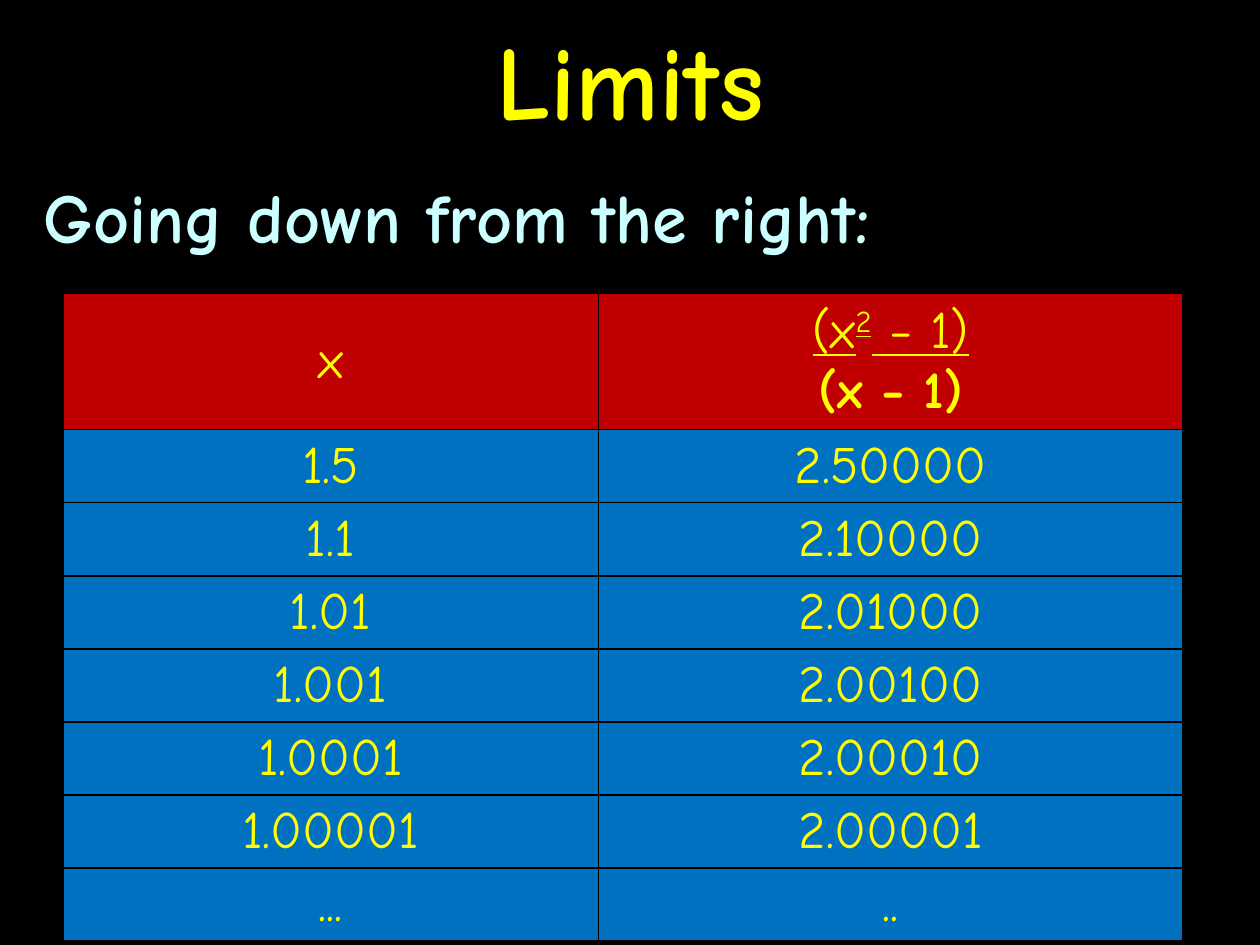
"""Build a slide that tabulates a limit approached from the right."""
from lxml import etree
from pptx import Presentation
from pptx.dml.color import RGBColor
from pptx.enum import text
from pptx.oxml.ns import qn
from pptx.util import Inches, Pt

FONT = "Comic Neue"
BLACK = RGBColor(0x00, 0x00, 0x00)
YELLOW = RGBColor(0xFF, 0xFF, 0x00)
PALE_CYAN = RGBColor(0xCC, 0xFF, 0xFF)
RED = RGBColor(0xC0, 0x00, 0x00)
BLUE = RGBColor(0x00, 0x70, 0xC0)

VALUES = [
    ("1.5", "2.50000"),
    ("1.1", "2.10000"),
    ("1.01", "2.01000"),
    ("1.001", "2.00100"),
    ("1.0001", "2.00010"),
    ("1.00001", "2.00001"),
    ("...", ".."),
]


def style_run(r, size, color, bold=False):
    """Set the font of one run."""
    r.font.name = FONT
    r.font.size = Pt(size)
    r.font.bold = bold
    r.font.color.rgb = color


def add_text(s, box, wording, size, color):
    """Add a bold one-paragraph text box and return it."""
    sp = s.shapes.add_textbox(*(Inches(v) for v in box))
    tf = sp.text_frame
    tf.word_wrap = True
    tf.text = wording
    style_run(tf.paragraphs[0].runs[0], size, color, bold=True)
    return sp


def add_borders(cell):
    """Draw a thin black line on each side of a cell."""
    tc_pr = cell._tc.get_or_add_tcPr()
    for side in ("lnL", "lnR", "lnT", "lnB"):
        ln = etree.SubElement(tc_pr, qn(f"a:{side}"), w=str(Pt(1)))
        fill = etree.SubElement(ln, qn("a:solidFill"))
        etree.SubElement(fill, qn("a:srgbClr"), val=str(BLACK))


def style_cell(cell, color):
    """Set the borders, fill, margins and anchor of a cell."""
    add_borders(cell)
    cell.fill.solid()
    cell.fill.fore_color.rgb = color
    cell.vertical_anchor = text.MSO_ANCHOR.MIDDLE
    cell.margin_left = cell.margin_right = Inches(0.04)
    cell.margin_top = cell.margin_bottom = Inches(0.04)
    for p in cell.text_frame.paragraphs:
        p.alignment = text.PP_ALIGN.CENTER
        for r in p.runs:
            style_run(r, 30, YELLOW)


def fill_fraction(cell):
    """Write the quotient as an underlined numerator over a denominator."""
    tf = cell.text_frame
    numerator = tf.paragraphs[0]
    for part in ("(x", "2", " − 1)"):
        numerator.add_run().text = part
    denominator = tf.add_paragraph()
    denominator.text = "(x − 1)"
    style_cell(cell, RED)
    for r in numerator.runs:
        r.font.underline = True
    numerator.runs[1]._r.get_or_add_rPr().set("baseline", "30000")
    denominator.runs[0].font.bold = True


def add_limit_table(s):
    """Add the table of x against the quotient."""
    header_height, row_height = Inches(1.04), Inches(0.56)
    height = header_height + row_height * len(VALUES)
    table = s.shapes.add_table(
        len(VALUES) + 1, 2, Inches(0.5), Inches(2.33), Inches(8.89), height
    ).table
    for column, width in zip(table.columns, (4.25, 4.64)):
        column.width = Inches(width)
    table.rows[0].height = header_height
    table.cell(0, 0).text = "x"
    style_cell(table.cell(0, 0), RED)
    fill_fraction(table.cell(0, 1))
    for i, row in enumerate(VALUES, start=1):
        table.rows[i].height = row_height
        for j, value in enumerate(row):
            table.cell(i, j).text = value
            style_cell(table.cell(i, j), BLUE)


def main():
    """Build and save the slide."""
    prs = Presentation()
    prs.slide_width, prs.slide_height = Inches(10), Inches(7.5)
    s = prs.slides.add_slide(prs.slide_layouts[6])
    s.background.fill.solid()
    s.background.fill.fore_color.rgb = BLACK

    title = add_text(s, (0, 0, 10, 1.25), "Limits", 60, YELLOW)
    title.text_frame.vertical_anchor = text.MSO_ANCHOR.MIDDLE
    title.text_frame.paragraphs[0].alignment = text.PP_ALIGN.CENTER

    body = add_text(s, (0.25, 1.33, 9.5, 6.17), "Going down from the right:", 40, PALE_CYAN)
    body.text_frame.paragraphs[0].space_before = Pt(8)

    add_limit_table(s)
    prs.save("out.pptx")


if __name__ == "__main__":
    main()
